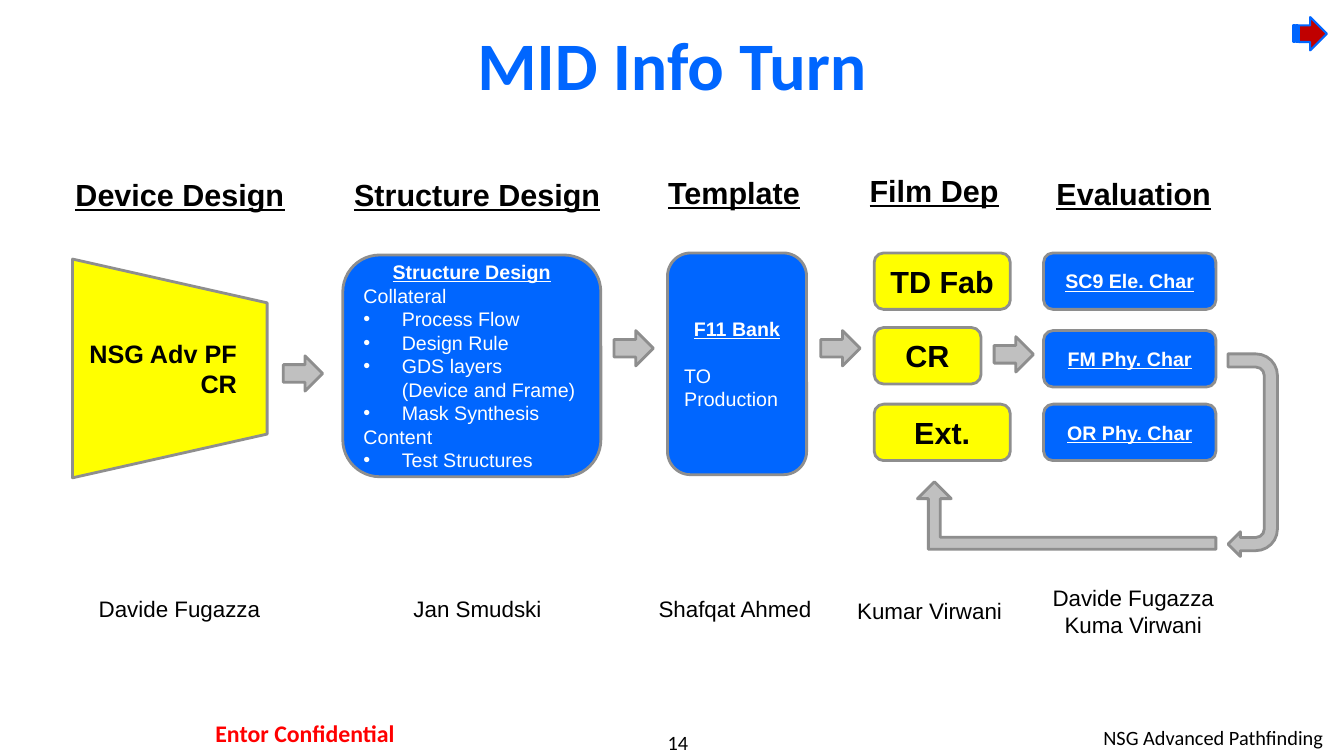
from lxml.etree import SubElement
from pptx import Presentation
from pptx.dml.color import RGBColor
from pptx.enum.shapes import MSO_SHAPE as SHAPE
from pptx.enum.text import MSO_ANCHOR as ANCHOR, PP_ALIGN as ALIGN
from pptx.oxml.ns import qn
from pptx.util import Inches, Pt

BLUE, YELLOW, SILVER, GRAY = "0066FF", "FFFF00", "C0C0C0", "8E8E8E"
BLACK, WHITE, RED = "000000", "FFFFFF", "FF0000"


def rgb(value):
    return RGBColor.from_string(value)


def write(par, text, size, color=BLACK, bold=False, line=False,
          font="Arial", align=ALIGN.CENTER):
    par.alignment = align
    run = par.add_run()
    run.text = text
    run.font.name, run.font.size = font, Pt(size)
    run.font.bold, run.font.underline = bold, line
    run.font.color.rgb = rgb(color)


def indent(par, depth, bullet):
    """Indent a paragraph by depth inches, with the bullet in the margin."""
    props = par._p.get_or_add_pPr()
    props.set("marL", str(Inches(depth)))
    if bullet:
        props.set("indent", str(-Inches(depth)))
        SubElement(props, qn("a:buFont")).set("typeface", "Arial")
        SubElement(props, qn("a:buChar")).set("char", "•")


def label(slide, box, lines, size, **style):
    """Add a text box with one paragraph per line."""
    frame = slide.shapes.add_textbox(*map(Inches, box)).text_frame
    frame.word_wrap = False
    for i, text in enumerate(lines):
        par = frame.add_paragraph() if i else frame.paragraphs[0]
        write(par, text, size, **style)
    return frame


def block(slide, kind, box, fill, edge=GRAY, width=2):
    shape = slide.shapes.add_shape(kind, *map(Inches, box))
    shape.shadow.inherit = False
    shape.fill.solid()
    shape.fill.fore_color.rgb = rgb(fill)
    shape.line.color.rgb = rgb(edge)
    shape.line.width = Pt(width)
    shape.text_frame.word_wrap = True
    shape.text_frame.vertical_anchor = ANCHOR.MIDDLE
    return shape


def tune(shape, values):
    for i, value in enumerate(values):
        shape.adjustments[i] = value


def flip(shape, *axes):
    for axis in axes:
        shape.element.spPr.get_or_add_xfrm().set(axis, "1")


def title(slide, box):
    head = slide.shapes.title
    head.left, head.top, head.width, head.height = map(Inches, box)
    head.text_frame.vertical_anchor = ANCHOR.MIDDLE
    write(head.text_frame.paragraphs[0], "MID Info Turn", 48.5, BLUE, True,
          font="Calibri")


def device(slide, left, top, width, height):
    """Place the funnel, turned a quarter left within the given box."""
    turned = (left + (width - height) / 2, top + (height - width) / 2,
              height, width)
    shape = block(slide, SHAPE.FLOWCHART_MANUAL_OPERATION, turned, YELLOW)
    shape.rotation = 270
    frame = shape.text_frame
    frame.margin_top = frame.margin_left = frame.margin_right = Inches(0.1)
    frame.margin_bottom = Inches(0.3)
    shape.element.txBody.bodyPr.set("vert", "vert")
    write(frame.paragraphs[0], "NSG Adv PF", 18, bold=True, align=ALIGN.RIGHT)
    write(frame.add_paragraph(), "CR", 18, bold=True, align=ALIGN.RIGHT)


def structure(slide, box):
    frame = block(slide, SHAPE.ROUNDED_RECTANGLE, box, BLUE).text_frame
    write(frame.paragraphs[0], "Structure Design", 14, WHITE, True, True)
    items = [("Collateral", 0, False), ("Process Flow", 0.38, True),
             ("Design Rule", 0.38, True), ("GDS layers", 0.38, True),
             ("(Device and Frame)", 0.38, False),
             ("Mask Synthesis", 0.38, True), ("Content", 0, False),
             ("Test Structures", 0.38, True)]
    for text, depth, bullet in items:
        par = frame.add_paragraph()
        indent(par, depth, bullet)
        write(par, text, 14, WHITE, align=ALIGN.LEFT)


def template(slide, box):
    frame = block(slide, SHAPE.ROUNDED_RECTANGLE, box, BLUE).text_frame
    write(frame.paragraphs[0], "F11 Bank", 14, WHITE, True, True)
    par = frame.add_paragraph()
    par.space_before = Pt(16.5)
    write(par, "TO Production", 14, WHITE, align=ALIGN.LEFT)


def stack(slide, left, rows, fill, size, color, line):
    """Place a column of boxes; each row is top, width and text."""
    for top, width, text in rows:
        shape = block(slide, SHAPE.ROUNDED_RECTANGLE,
                      (left, top, width, 0.56), fill)
        write(shape.text_frame.paragraphs[0], text, size, color, True, line)


def arrows(slide):
    for left, top in [(2.81, 3.53), (6.09, 3.28), (8.14, 3.28), (9.86, 3.34)]:
        block(slide, SHAPE.RIGHT_ARROW, (left, top, 0.39, 0.35), SILVER)


def loop(slide, left, top):
    """Place the feedback path from evaluation back to film deposition."""
    back = block(slide, SHAPE.U_TURN_ARROW,
                 (left + 2.32, top - 0.51, 2.01, 0.49), SILVER)
    tune(back, (0.267, 0.25, 0.25, 0.438, 1))
    flip(back, "flipH", "flipV")
    back.rotation = 270
    rise = block(slide, SHAPE.BENT_UP_ARROW, (left, top, 2.96, 0.67), SILVER)
    tune(rise, (0.177, 0.25, 0.25))
    flip(rise, "flipH")


def labels(slide):
    heads = [(0.64, 1.7, 2.29, "Device Design"),
             (3.4, 1.7, 2.67, "Structure Design"),
             (6.52, 1.68, 1.52, "Template"), (8.52, 1.66, 1.49, "Film Dep"),
             (10.37, 1.69, 1.75, "Evaluation")]
    for left, top, width, text in heads:
        label(slide, (left, top, width, 0.47), [text], 21.8,
              bold=True, line=True)
    owners = [(0.87, 5.86, 1.82, ["Davide Fugazza"]),
              (3.99, 5.86, 1.49, ["Jan Smudski"]),
              (6.42, 5.86, 1.74, ["Shafqat Ahmed"]),
              (8.38, 5.88, 1.68, ["Kumar Virwani"]),
              (10.33, 5.75, 1.82, ["Davide Fugazza", "Kuma Virwani"])]
    for left, top, width, names in owners:
        label(slide, (left, top, width, 0.1 + 0.27 * len(names)), names, 16)


def footer(slide):
    label(slide, (1.55, 7.08, 2.95, 0.41), ["Entor Confidential"], 17,
          color=RED, bold=True, font="Calibri")
    page = label(slide, (5.56, 7.24, 2.33, 0.24), ["14"], 14.5,
                 font="Calibri")
    page.margin_top = page.margin_bottom = 0
    label(slide, (8.83, 7.15, 4.39, 0.35), ["NSG Advanced Pathfinding"], 14.5,
          font="Calibri", align=ALIGN.RIGHT).word_wrap = True


def main():
    deck = Presentation()
    deck.slide_width, deck.slide_height = Inches(13.33), Inches(7.5)
    slide = deck.slides.add_slide(deck.slide_layouts[5])
    title(slide, (1, 0.17, 11.33, 0.92))
    device(slide, 0.72, 2.57, 1.93, 2.17)
    structure(slide, (3.4, 2.53, 2.56, 2.2))
    template(slide, (6.62, 2.51, 1.38, 2.2))
    stack(slide, 8.67, [(2.51, 1.35, "TD Fab"), (3.25, 1.06, "CR"),
                        (4.01, 1.35, "Ext.")], YELLOW, 21.8, BLACK, False)
    stack(slide, 10.35, [(2.51, 1.71, "SC9 Ele. Char"),
                         (3.28, 1.71, "FM Phy. Char"),
                         (4.01, 1.71, "OR Phy. Char")], BLUE, 14, WHITE, True)
    arrows(slide)
    loop(slide, 9.1, 4.78)
    labels(slide)
    footer(slide)
    block(slide, SHAPE.STRIPED_RIGHT_ARROW, (12.83, 0.17, 0.33, 0.33),
          "C00000", BLUE, 1.5)
    deck.save("out.pptx")


if __name__ == "__main__":
    main()
